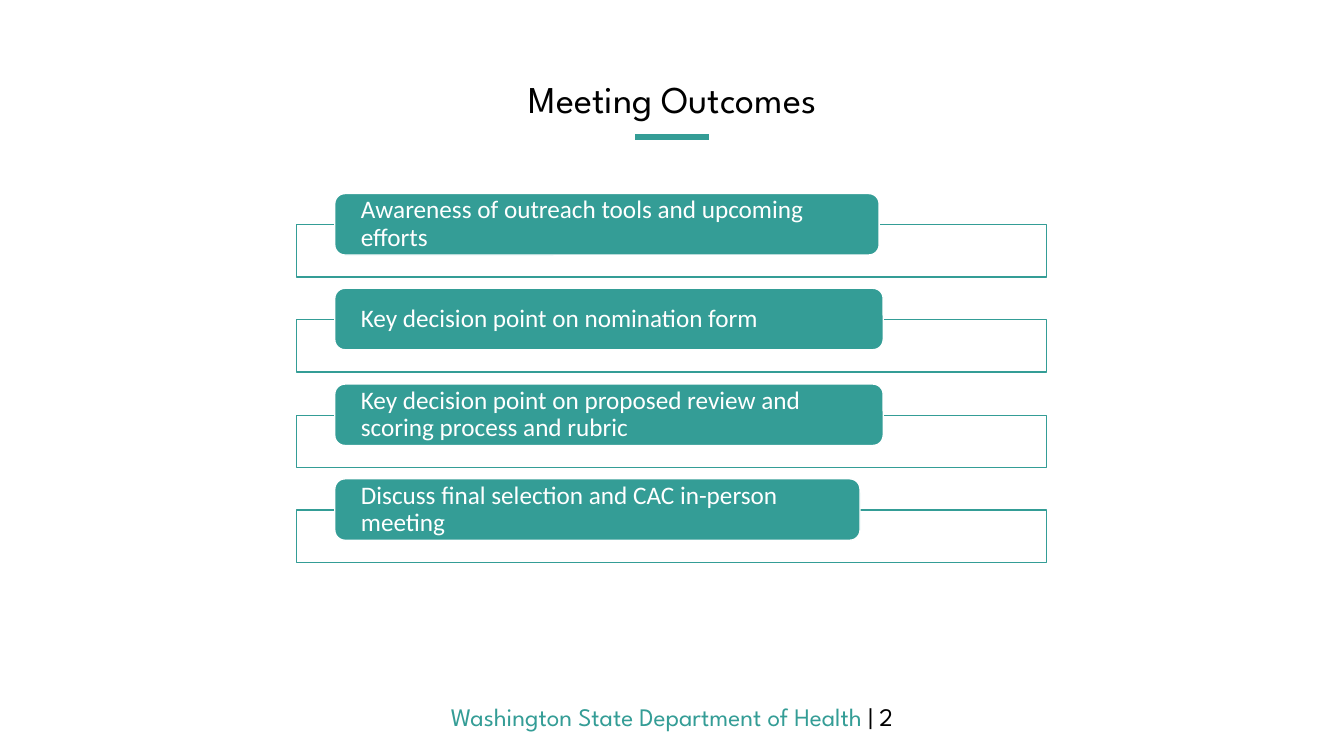
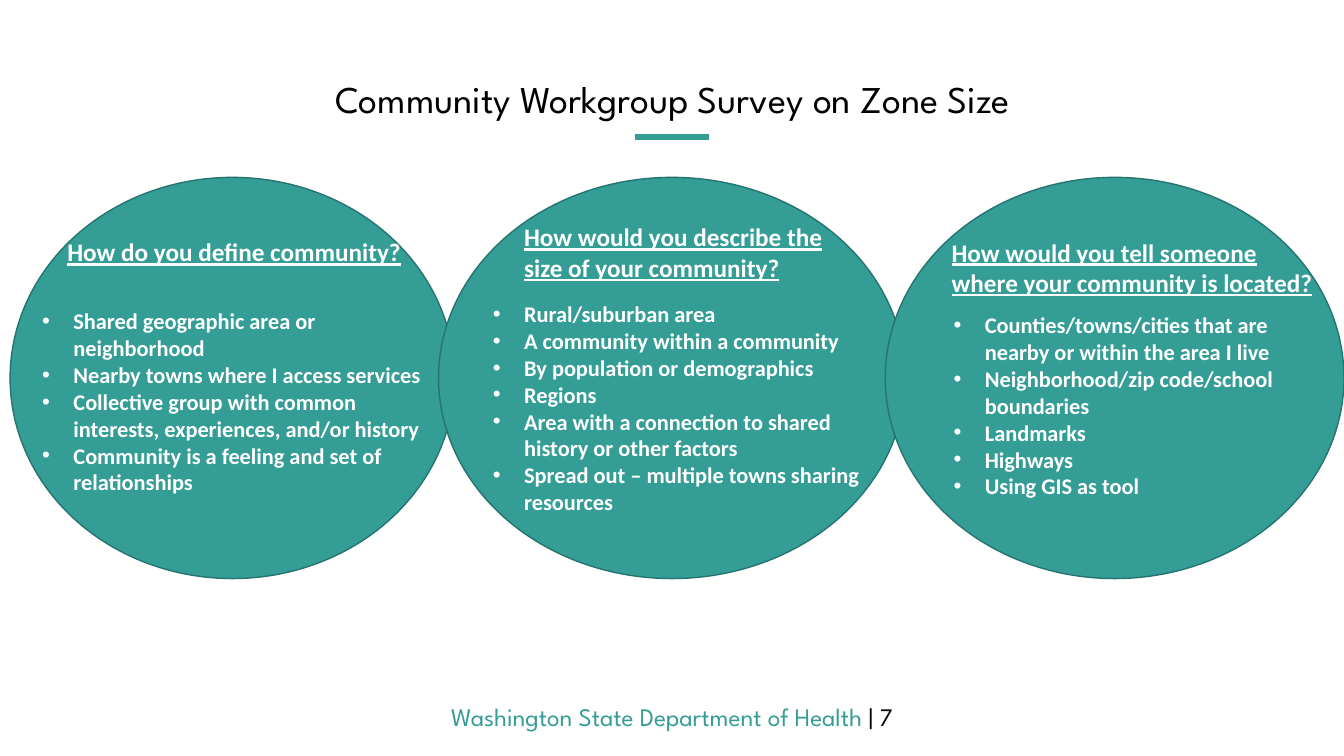
from lxml import etree
from pptx import Presentation
from pptx.dml.color import RGBColor
from pptx.enum.shapes import MSO_CONNECTOR as CONNECTOR, MSO_SHAPE as SHAPE
from pptx.enum.text import MSO_ANCHOR as ANCHOR, PP_ALIGN as ALIGN
from pptx.oxml.ns import qn
from pptx.util import Pt

COLORS = {"teal": "349D96", "dark_teal": "26746F", "white": "FFFFFF", "black": "000000"}
HEAD_FONT, BODY_FONT = "League Spartan", "Calibri"
SLIDE_W, SLIDE_H = 1333, 750
FOOTER = "Washington State Department of Health "

OUTCOMES = {
    "title": "Meeting Outcomes",
    "number": 2,
    # text, width of the label
    "rows": [
        ("Awareness of outreach tools and upcoming efforts", 540),
        ("Key decision point on nomination form", 544),
        ("Key decision point on proposed review and scoring process and rubric", 544),
        ("Discuss final selection and CAC in-person meeting", 521),
    ],
}
SURVEY = {
    "title": "Community Workgroup Survey on Zone Size",
    "number": 7,
    # boxes are left, top, width, height
    "topics": [
        {
            "oval": (10, 176, 441, 398),
            "question": "How do you define community?",
            "question_box": (57, 230, 353, 40),
            "answers": [
                "Shared geographic area or neighborhood",
                "Nearby towns where I access services",
                "Collective group with common interests, experiences, and/or history",
                "Community is a feeling and set of relationships",
            ],
            "answers_box": (32, 300, 398, 229),
        },
        {
            "oval": (435, 176, 463, 398),
            "question": "How would you describe the size of your community?",
            "question_box": (510, 215, 353, 71),
            "answers": [
                "Rural/suburban area",
                "A community within a community",
                "By population or demographics",
                "Regions",
                "Area with a connection to shared history or other factors",
                "Spread out – multiple towns sharing resources",
            ],
            "answers_box": (479, 293, 398, 256),
        },
        {
            "oval": (878, 176, 455, 398),
            "question": "How would you tell someone where your community is located?",
            "question_box": (934, 230, 386, 71),
            "answers": [
                "Counties/towns/cities that are nearby or within the area I live",
                "Neighborhood/zip code/school boundaries",
                "Landmarks",
                "Highways",
                "Using GIS as tool",
            ],
            "answers_box": (936, 304, 397, 283),
        },
    ],
}

ROW_TOP, ROW_PITCH = 192, 94.33
LABEL_X, LABEL_H, LABEL_INSET = 332, 61, 23
FRAME_X, FRAME_W, FRAME_H, FRAME_DROP = 294, 744, 52, 31
BULLET_INDENT = 31


def px(n):
    """Turn px (100 to the inch) into EMU."""
    return round(n) * 9144


def rgb(name):
    return RGBColor.from_string(COLORS[name])


def write(sp, paragraphs, *, size, font=BODY_FONT, color="white", bold=False,
          underline=False, align=ALIGN.LEFT, anchor=ANCHOR.TOP, spacing=1.0,
          insets=(10, 5), bullet=None):
    """Fill a shape; a paragraph is a string or a list of (text, colour) runs."""
    tf = sp.text_frame
    tf.word_wrap = True
    tf.vertical_anchor = anchor
    tf.margin_left = tf.margin_right = px(insets[0])
    tf.margin_top = tf.margin_bottom = px(insets[1])
    for i, runs in enumerate(paragraphs):
        p = tf.add_paragraph() if i else tf.paragraphs[0]
        p.alignment, p.line_spacing = align, spacing
        if bullet:
            pPr = p._p.get_or_add_pPr()
            pPr.set("marL", str(px(BULLET_INDENT)))
            pPr.set("indent", str(-px(BULLET_INDENT)))
            etree.SubElement(pPr, qn("a:buFont")).set("typeface", "Arial")
            etree.SubElement(pPr, qn("a:buChar")).set("char", bullet)
        for text, run_color in [(runs, color)] if isinstance(runs, str) else runs:
            r = p.add_run()
            r.text = text
            r.font.name, r.font.size = font, Pt(size)
            r.font.bold, r.font.underline = bold, underline
            r.font.color.rgb = rgb(run_color)


def add_text(slide, box, paragraphs, **style):
    write(slide.shapes.add_textbox(*map(px, box)), paragraphs, **style)


def add_box(slide, kind, box, fill, line, alpha=None):
    sp = slide.shapes.add_shape(kind, *map(px, box))
    sp.shadow.inherit = False
    sp.fill.solid()
    sp.fill.fore_color.rgb = rgb(fill)
    if alpha:
        solid = sp._element.spPr.find(qn("a:solidFill"))
        etree.SubElement(solid[0], qn("a:alpha")).set("val", str(alpha * 1000))
    sp.line.color.rgb = rgb(line)
    sp.line.width = Pt(1)
    return sp


def add_slide(prs, content):
    """Start a slide with the shared title, accent line and footer."""
    slide = prs.slides.add_slide(prs.slide_layouts[6])
    accent = slide.shapes.add_connector(
        CONNECTOR.STRAIGHT, px(630), px(136), px(703), px(136))
    accent.line.color.rgb = rgb("teal")
    accent.line.width = Pt(4)
    etree.SubElement(accent._element.spPr, qn("a:effectLst"))
    add_text(slide, (0, 691, SLIDE_W, 40),
             [[(FOOTER, "teal"), (f"| {content['number']}", "black")]],
             size=18, font=HEAD_FONT, align=ALIGN.CENTER)
    add_text(slide, (1, 74, SLIDE_W - 1, 53), [content["title"]], size=27,
             font=HEAD_FONT, color="black", align=ALIGN.CENTER,
             anchor=ANCHOR.MIDDLE, spacing=0.9)
    return slide


def build_outcomes(prs):
    slide = add_slide(prs, OUTCOMES)
    for i, (text, width) in enumerate(OUTCOMES["rows"]):
        top = ROW_TOP + i * ROW_PITCH
        add_box(slide, SHAPE.RECTANGLE, (FRAME_X, top + FRAME_DROP, FRAME_W, FRAME_H),
                "white", "teal", alpha=90)
        label = add_box(slide, SHAPE.ROUNDED_RECTANGLE, (LABEL_X, top, width, LABEL_H),
                        "teal", "white")
        write(label, [text], size=18, anchor=ANCHOR.MIDDLE, spacing=0.9,
              insets=(LABEL_INSET, 0))


def build_survey(prs):
    slide = add_slide(prs, SURVEY)
    for topic in SURVEY["topics"]:
        add_box(slide, SHAPE.OVAL, topic["oval"], "teal", "dark_teal")
    for topic in SURVEY["topics"]:
        add_text(slide, topic["question_box"], [topic["question"]], size=18,
                 bold=True, underline=True)
        add_text(slide, topic["answers_box"], topic["answers"], size=16,
                 bold=True, bullet="•")


def main():
    prs = Presentation()
    prs.slide_width, prs.slide_height = px(SLIDE_W), px(SLIDE_H)
    build_outcomes(prs)
    build_survey(prs)
    prs.save("out.pptx")


if __name__ == "__main__":
    main()
